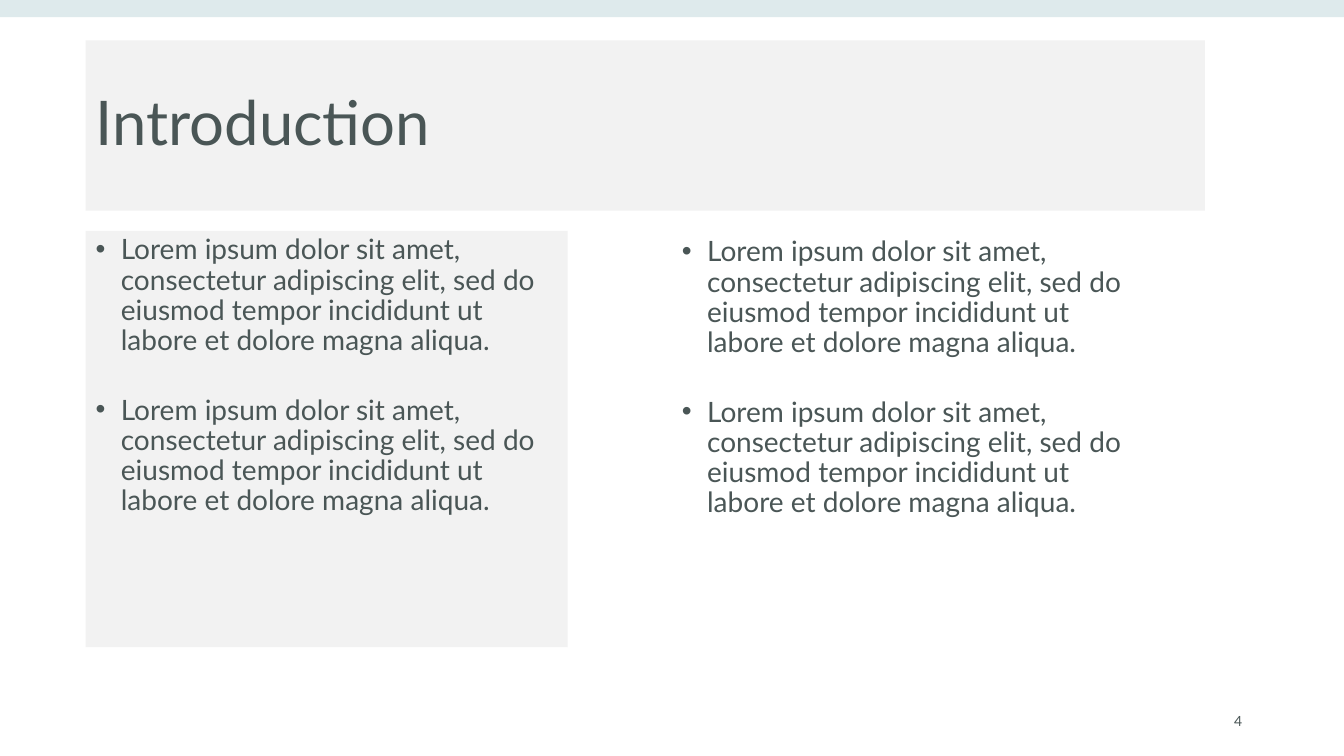
from lxml import etree
from pptx import Presentation
from pptx.dml.color import RGBColor
from pptx.enum.shapes import MSO_SHAPE
from pptx.enum.text import MSO_ANCHOR, MSO_AUTO_SIZE, PP_ALIGN
from pptx.oxml.ns import qn
from pptx.util import Inches, Pt

RECT = MSO_SHAPE.RECTANGLE
MIDDLE = MSO_ANCHOR.MIDDLE
TOP = MSO_ANCHOR.TOP
LEFT, RIGHT = PP_ALIGN.LEFT, PP_ALIGN.RIGHT
NO_FIT = MSO_AUTO_SIZE.NONE

# Content
TITLE = "Introduction"
LOREM = ("Lorem ipsum dolor sit amet, consectetur adipiscing elit, sed do "
         "eiusmod tempor incididunt ut labore et dolore magna aliqua.")
POINTS = [LOREM, LOREM]
PAGE = "4"

# Style
FONT = "Lato"
SLATE = RGBColor(0x4A, 0x56, 0x56)
PANEL = RGBColor(0xF2, 0xF2, 0xF2)
BAND = RGBColor(0xBE, 0xD6, 0xDA)

# Layout in inches: left, top, width, height
WIDE, HIGH = 13.33, 7.5
EDGE = 0.85
TITLE_BOX = (EDGE, 0.4, 11.1, 1.69)
COL_W, COL_H = 4.78, 4.13
COLUMNS = [  # left, top, fill
    (EDGE, 2.29, PANEL),
    (WIDE / 2, 2.31, None),
]
PAGE_BOX = (9.42, 6.95, 3, 0.4)


def fill(shape, color):
    shape.fill.solid()
    shape.fill.fore_color.rgb = color


def setup(shape, anchor):
    frame = shape.text_frame
    frame.word_wrap = True
    frame.auto_size = NO_FIT
    frame.vertical_anchor = anchor
    return frame


def add_run(para, text, size):
    run = para.add_run()
    run.text = text
    run.font.name = FONT
    run.font.size = Pt(size)
    run.font.color.rgb = SLATE
    return run


def add_box(slide, box, anchor):
    shape = slide.shapes.add_textbox(*map(Inches, box))
    return shape, setup(shape, anchor)


def add_list(frame, points):
    for i, point in enumerate(points):
        para = frame.add_paragraph() if i else frame.paragraphs[0]
        props = para._p.get_or_add_pPr()
        props.set("marL", str(Inches(0.25)))
        props.set("indent", str(-Inches(0.25)))
        etree.SubElement(props, qn("a:buFont")).set("typeface", "Arial")
        etree.SubElement(props, qn("a:buChar")).set("char", "•")
        para.alignment = LEFT
        para.line_spacing = 0.9
        para.space_before = Pt(10 if i else 0)
        para.space_after = Pt(18)
        add_run(para, point, 20)


def main():
    deck = Presentation()
    deck.slide_width, deck.slide_height = Inches(WIDE), Inches(HIGH)
    slide = deck.slides.add_slide(deck.slide_layouts[5])

    # Half-clear band along the top
    band = slide.shapes.add_shape(RECT, 0, 0, Inches(WIDE), Inches(0.17))
    band.shadow.inherit = False
    band.line.fill.background()
    fill(band, BAND)
    tint = band._element.spPr.find(".//" + qn("a:srgbClr"))
    etree.SubElement(tint, qn("a:alpha")).set("val", "50000")

    # Title
    title = slide.shapes.title
    title.left, title.top, title.width, title.height = map(Inches, TITLE_BOX)
    fill(title, PANEL)
    para = setup(title, MIDDLE).paragraphs[0]
    para.alignment = LEFT
    para.line_spacing = 0.9
    add_run(para, TITLE, 44)

    # Two columns of points
    for left, top, color in COLUMNS:
        shape, frame = add_box(slide, (left, top, COL_W, COL_H), TOP)
        if color:
            fill(shape, color)
            frame.margin_right = Inches(0.05)
        add_list(frame, POINTS)

    # Page number
    _, frame = add_box(slide, PAGE_BOX, MIDDLE)
    para = frame.paragraphs[0]
    para.alignment = RIGHT
    run = add_run(para, PAGE, 10)
    run.font._element.set("spc", "150")

    deck.save("out.pptx")


if __name__ == "__main__":
    main()
